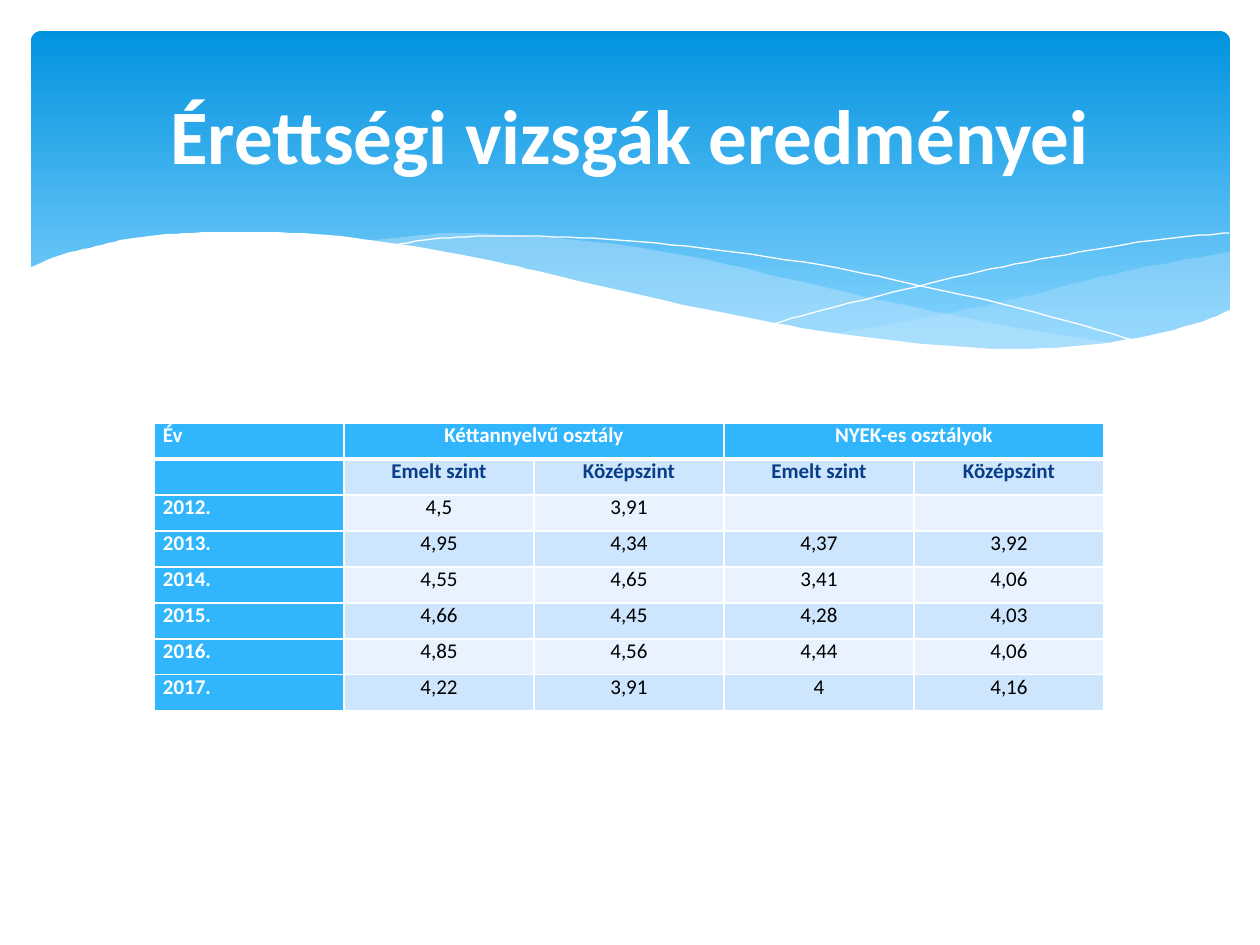
import pptx
import pptx.dml.color
import pptx.enum.shapes
import pptx.enum.text
import pptx.oxml
import pptx.oxml.ns
import pptx.util

EMU_PER_PX = 914400 / 126
WHITE, SKY, PALE, MIST = "FFFFFF", "31B6FD", "CEE5FE", "E8F3FF"
NAVY, BLACK, WAVE = "073E87", "000000", "C6E7FC"

RIGHT_WAVE_TOP = [(1230, 252), (1178, 261), (1123, 272), (1085, 281), (1014, 299),
                  (919, 319), (833, 334)]
RIGHT_WAVE_BOTTOM = [(833, 334), (888, 341), (954, 348), (1012, 350), (1076, 348),
                     (1140, 339), (1187, 326), (1230, 311)]
MIDDLE_WAVE_TOP = [(1125, 344), (1055, 334), (977, 320), (890, 302), (793, 280), (717, 262),
                   (648, 249), (586, 241), (529, 236), (455, 233), (413, 236), (360, 241)]
MIDDLE_WAVE_BOTTOM = [(360, 241), (431, 251), (509, 266), (566, 280), (668, 302), (757, 321),
                      (838, 335), (910, 345), (974, 349), (1031, 350), (1080, 349), (1125, 344)]
FALLING_LINE = [(389, 246), (433, 239), (488, 236), (567, 237), (643, 242), (733, 252),
                (838, 268), (916, 285), (1002, 304), (1095, 329), (1143, 343)]
RISING_LINE = [(772, 324), (823, 310), (907, 289), (978, 272), (1053, 257), (1128, 244),
               (1182, 237), (1229, 233)]
BANNER_EDGE = [(1231, 310), (1197, 323), (1147, 336), (1087, 345), (1019, 349), (937, 345),
               (842, 334), (760, 320), (667, 301), (563, 277), (493, 261), (398, 244),
               (315, 234), (243, 232), (184, 233), (134, 238), (96, 246), (58, 256), (29, 268)]

RESULTS = [
    ["Év", "Kéttannyelvű osztály", "", "NYEK-es osztályok", ""],
    ["", "Emelt szint", "Középszint", "Emelt szint", "Középszint"],
    ["2012.", "4,5", "3,91", "", ""],
    ["2013.", "4,95", "4,34", "4,37", "3,92"],
    ["2014.", "4,55", "4,65", "3,41", "4,06"],
    ["2015.", "4,66", "4,45", "4,28", "4,03"],
    ["2016.", "4,85", "4,56", "4,44", "4,06"],
    ["2017.", "4,22", "3,91", "4", "4,16"],
]


def px(length):
    return pptx.util.Emu(round(length * EMU_PER_PX))


def color(hex_string):
    return pptx.dml.color.RGBColor.from_string(hex_string)


def smooth(points, steps=6):
    """Return a Catmull-Rom curve through the points, as short segments."""
    padded = [points[0], *points, points[-1]]
    curve = [points[0]]
    for a, b, c, d in zip(padded, padded[1:], padded[2:], padded[3:]):
        for step in range(1, steps + 1):
            t = step / steps
            curve.append(tuple(
                (2 * q + (r - p) * t + (2 * p - 5 * q + 4 * r - s) * t ** 2
                 + (3 * q - p - 3 * r + s) * t ** 3) / 2
                for p, q, r, s in zip(a, b, c, d)))
    return curve


class SlideBuilder:
    def __init__(self, presentation, font="Calibri"):
        self.font = font
        self.slide = presentation.slides.add_slide(presentation.slide_layouts[5])
        self.shapes = self.slide.shapes

    def format_text(self, paragraph, size, font_color, bold, centered):
        alignment = pptx.enum.text.PP_ALIGN
        paragraph.alignment = alignment.CENTER if centered else alignment.LEFT
        for run in paragraph.runs:
            run.font.name = self.font
            run.font.size = pptx.util.Pt(size)
            run.font.bold = bold
            run.font.color.rgb = color(font_color)

    def banner(self, left, top, width, height, stops, rounding):
        kind = pptx.enum.shapes.MSO_SHAPE.ROUNDED_RECTANGLE
        shape = self.shapes.add_shape(kind, px(left), px(top), px(width), px(height))
        shape.adjustments[0] = rounding
        shape.shadow.inherit = False
        shape.line.fill.background()
        shape.fill.gradient()
        shape.fill.gradient_angle = 270
        for stop, (position, hex_string) in zip(shape.fill.gradient_stops, stops):
            stop.position = position
            stop.color.rgb = color(hex_string)

    def outline(self, points, closed):
        builder = self.shapes.build_freeform(*points[0], scale=EMU_PER_PX)
        builder.add_line_segments(points[1:], close=closed)
        shape = builder.convert_to_shape()
        shape.shadow.inherit = False
        return shape

    def area(self, points, fill, opacity=100):
        shape = self.outline(points, closed=True)
        shape.line.fill.background()
        shape.fill.solid()
        shape.fill.fore_color.rgb = color(fill)
        if opacity < 100:
            rgb = shape.fill._xPr.find(".//" + pptx.oxml.ns.qn("a:srgbClr"))
            alpha = pptx.oxml.ns.nsdecls("a")
            rgb.append(pptx.oxml.parse_xml(f'<a:alpha {alpha} val="{opacity * 1000}"/>'))

    def curve(self, points, line_color):
        shape = self.outline(smooth(points), closed=False)
        shape.fill.background()
        shape.line.color.rgb = color(line_color)
        shape.line.width = pptx.util.Pt(0)

    def title(self, text, left, top, width, height):
        title = self.shapes.title
        self.shapes._spTree.append(title._element)  # in front of the banner
        title.left, title.top, title.width, title.height = map(px, (left, top, width, height))
        title.text_frame.text = text
        title.text_frame.vertical_anchor = pptx.enum.text.MSO_ANCHOR.MIDDLE
        self.format_text(title.text_frame.paragraphs[0], 44, WHITE, True, True)

    def borders(self, cell, bottom_points):
        properties = cell._tc.get_or_add_tcPr()
        for side, points in zip("LRTB", (1, 1, 1, bottom_points)):
            properties.append(pptx.oxml.parse_xml(
                f'<a:ln{side} {pptx.oxml.ns.nsdecls("a")} w="{points * 12700}"><a:solidFill>'
                f'<a:srgbClr val="{WHITE}"/></a:solidFill></a:ln{side}>'))

    def cell(self, cell, text, fill, font_color, bold, centered, bottom_points):
        cell.margin_left = cell.margin_right = px(9)
        cell.margin_top = cell.margin_bottom = 0
        cell.text_frame.text = text
        paragraph = cell.text_frame.paragraphs[0]
        self.format_text(paragraph, 12, font_color, bold, centered)
        if not text:
            paragraph._p.get_or_add_endParaRPr().set("sz", "1200")
        self.borders(cell, bottom_points)
        cell.fill.solid()
        cell.fill.fore_color.rgb = color(fill)

    def table(self, rows, left, top, column_width, row_height):
        columns = len(rows[0])
        table = self.shapes.add_table(len(rows), columns, px(left), px(top),
                                      px(columns * column_width),
                                      px(len(rows) * row_height)).table
        for column in table.columns:
            column.width = px(column_width)
        for i, row in enumerate(rows):
            table.rows[i].height = px(row_height)
            for j, text in enumerate(row):
                heading = i == 0 or j == 0
                fill = SKY if heading else PALE if i % 2 else MIST
                font_color = WHITE if heading else NAVY if i == 1 else BLACK
                self.cell(table.cell(i, j), text, fill, font_color, heading or i == 1,
                          j > 0, 3 if i == 0 else 1)
        for j in range(1, columns, 2):
            table.cell(0, j).merge(table.cell(0, j + 1))


def main():
    presentation = pptx.Presentation()
    presentation.slide_width, presentation.slide_height = px(1260), px(945)
    builder = SlideBuilder(presentation)
    builder.banner(31, 31, 1199, 340, [(0, "0293E0"), (0.9, "83D3FE")], 0.03)
    builder.area(smooth(RIGHT_WAVE_TOP) + smooth(RIGHT_WAVE_BOTTOM), WAVE, 29)
    builder.area(smooth(MIDDLE_WAVE_TOP) + smooth(MIDDLE_WAVE_BOTTOM), WAVE, 40)
    builder.curve(FALLING_LINE, WHITE)
    builder.curve(RISING_LINE, WHITE)
    builder.area(smooth(BANNER_EDGE) + [(29, 415), (1231, 415)], WHITE)
    builder.title("Érettségi vizsgák eredményei", 63, 47, 1134, 173)
    builder.table(RESULTS, 154, 423, 190, 36)
    presentation.save("out.pptx")


if __name__ == "__main__":
    main()
